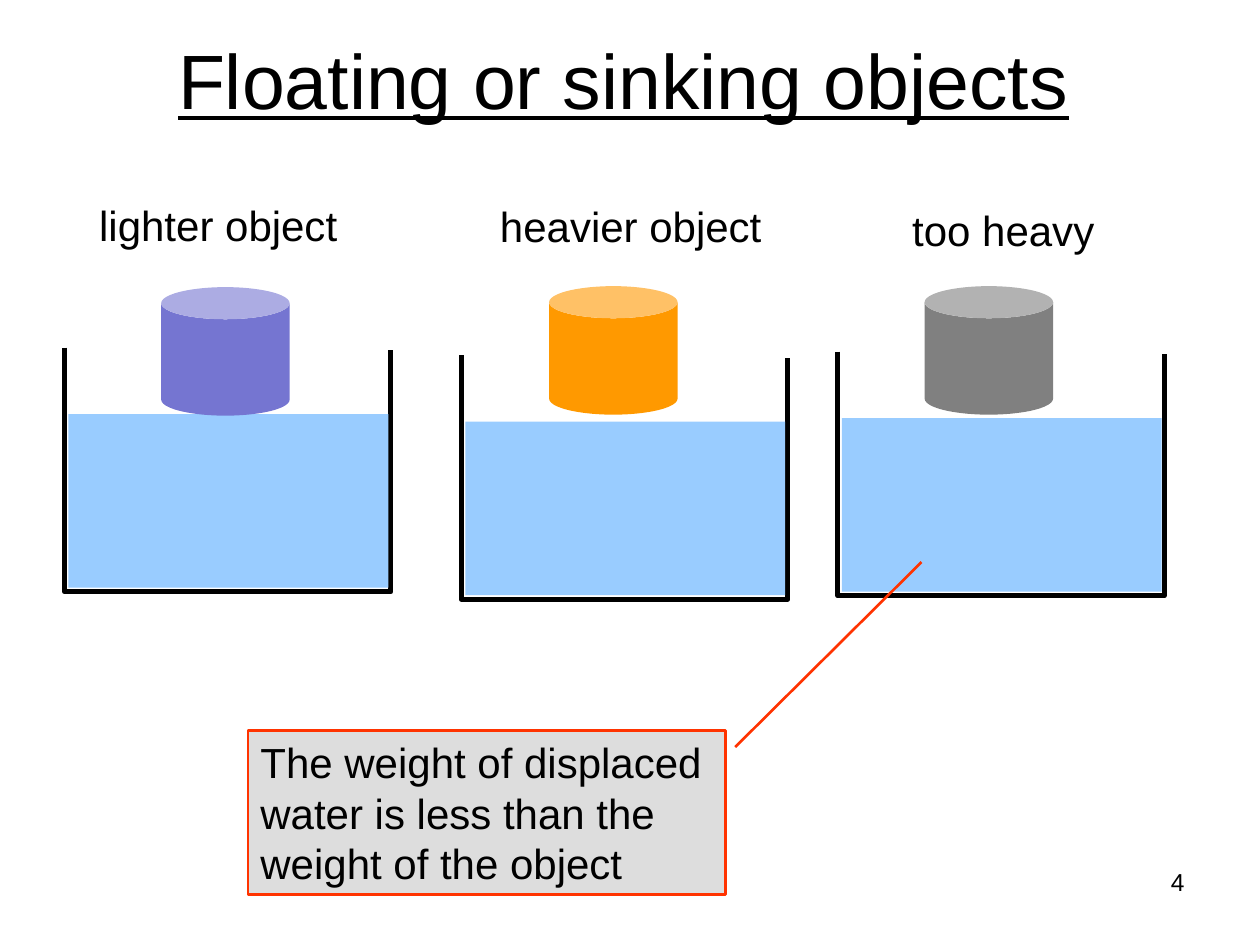
from pptx import Presentation
from pptx.dml.color import RGBColor
from pptx.enum.shapes import MSO_SHAPE
from pptx.enum.text import MSO_ANCHOR, MSO_AUTO_SIZE, PP_ALIGN
from pptx.oxml.ns import qn
from pptx.util import Cm, Pt
from lxml.etree import SubElement

BLACK, WATER, RED, LIGHT_GREY = "000000", "99CCFF", "FF3300", "DDDDDD"
TANK_WIDTH, TANK_HEIGHT = 6.58, 4.92
CAN_SIZE = 2.59

# label, label place and width, can place and colour, tank place
EXPERIMENTS = [
    ("lighter object", (1.75, 3.89, 5.31), (3.25, 5.79), "7575D1", (1.3, 7.01)),
    ("heavier object", (9.83, 3.91, 5.79), (11.07, 5.77), "FF9900", (9.3, 7.16)),
    ("too heavy", (18.14, 3.99, 4.19), (18.64, 5.77), "808080", (16.89, 7.09)),
]


def color(hex_string):
    return RGBColor.from_string(hex_string)


def write(frame, text, size=24, align=PP_ALIGN.LEFT, anchor=MSO_ANCHOR.TOP,
          underline=None, wrap=True):
    frame.text = text
    frame.word_wrap = wrap
    frame.vertical_anchor = anchor
    for paragraph in frame.paragraphs:
        paragraph.alignment = align
        font = paragraph.runs[0].font
        font.name, font.size, font.underline = "Arial", Pt(size), underline
        font.color.rgb = color(BLACK)


class SlideBuilder:
    def __init__(self, presentation):
        self.slide = presentation.slides.add_slide(presentation.slide_layouts[5])
        self.shapes = self.slide.shapes

    def style(self, shape, fill=None, line=None, line_width=1.0):
        shape.shadow.inherit = False
        if fill:
            shape.fill.solid()
            shape.fill.fore_color.rgb = color(fill)
        else:
            shape.fill.background()
        if line:
            shape.line.color.rgb = color(line)
            shape.line.width = Pt(line_width)
        else:
            shape.line.fill.background()

    def title(self, text, left, top, width, height):
        title = self.shapes.title
        title.left, title.top = Cm(left), Cm(top)
        title.width, title.height = Cm(width), Cm(height)
        write(title.text_frame, text, size=44, align=PP_ALIGN.CENTER,
              anchor=MSO_ANCHOR.MIDDLE, underline=True)

    def text(self, text, left, top, width, height=1.27, **text_format):
        box = self.shapes.add_textbox(Cm(left), Cm(top), Cm(width), Cm(height))
        write(box.text_frame, text, **text_format)
        return box

    def label(self, text, left, top, width):
        box = self.text(text, left, top, width, wrap=False)
        box.text_frame.auto_size = MSO_AUTO_SIZE.SHAPE_TO_FIT_TEXT

    def shape(self, kind, left, top, width, height, **look):
        shape = self.shapes.add_shape(kind, Cm(left), Cm(top), Cm(width), Cm(height))
        self.style(shape, **look)
        return shape

    def tank(self, left, top):
        # Open vessel, its right wall slightly lower than the left
        right, bottom = left + TANK_WIDTH, top + TANK_HEIGHT
        outline = self.shapes.build_freeform(Cm(left), Cm(top))
        outline.add_line_segments(
            [(Cm(left), Cm(bottom)), (Cm(right), Cm(bottom)), (Cm(right), Cm(top + 0.05))],
            close=False)
        vessel = outline.convert_to_shape()
        self.style(vessel, line=BLACK, line_width=3)
        SubElement(vessel.line._get_or_add_ln(), qn("a:round"))
        # Water
        self.shape(MSO_SHAPE.RECTANGLE, left + 0.08, top + 1.34, 6.45, 3.5, fill=WATER)

    def can(self, left, top, fill):
        can = self.shape(MSO_SHAPE.CAN, left, top, CAN_SIZE, CAN_SIZE, fill=fill)
        can.adjustments[0] = 0.25

    def callout(self, text, left, top, width, height, pointer):
        callout = self.shape(MSO_SHAPE.LINE_CALLOUT_1, left, top, width, height,
                             fill=LIGHT_GREY, line=RED, line_width=1.5)
        for index, value in enumerate(pointer):
            callout.adjustments[index] = value
        write(callout.text_frame, text)


def main():
    presentation = Presentation()
    presentation.slide_width, presentation.slide_height = Cm(25.4), Cm(19.05)
    builder = SlideBuilder(presentation)

    builder.title("Floating or sinking objects", 1.14, 0, 22.86, 3.18)

    # Three experiments
    for label, label_place, can_place, can_fill, tank_place in EXPERIMENTS:
        builder.tank(*tank_place)
        builder.can(*can_place, can_fill)
        builder.label(label, *label_place)

    # Explanation pointing at the last tank
    builder.callout(
        "The weight of displaced\nwater is less than the\nweight of the object",
        5, 14.73, 9.63, 3.3, pointer=(0.1, 1.02, -1.03, 1.41))

    # Slide number
    builder.text("4", 18.21, 17.35, 5.92, 1.32, size=14, align=PP_ALIGN.RIGHT)

    presentation.save("out.pptx")


if __name__ == "__main__":
    main()
